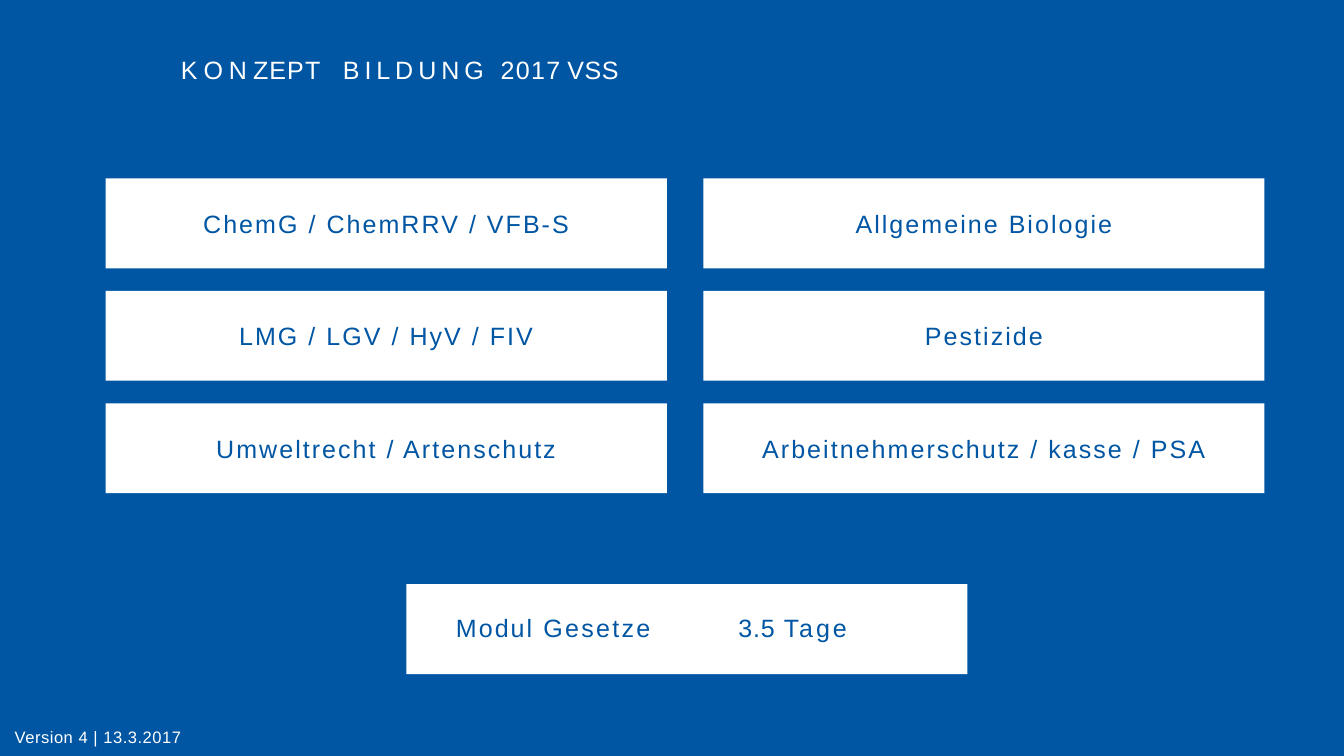
import pptx
import pptx.dml.color
import pptx.enum.shapes
import pptx.enum.text
import pptx.util

BLUE = pptx.dml.color.RGBColor(0x00, 0x56, 0xA3)
WHITE = pptx.dml.color.RGBColor(0xFF, 0xFF, 0xFF)
FONT = "Arial"
TEXT_SIZE = 29.5
VERSION_SIZE = 19.5
SPACING = 2.4  # letter spacing in points

# Grid of topic boxes, in inches
LEFT, TOP = 1.73, 2.92
COLUMN_STEP, ROW_STEP = 9.78, 1.84
BOX_WIDTH, BOX_HEIGHT = 9.18, 1.47
MODULE_LEFT, MODULE_TOP = 6.65, 9.56
MODULE_TEXT_TOP = MODULE_TOP + 0.46

TOPICS = [
    ["ChemG / ChemRRV / VFB-S", "Allgemeine Biologie"],
    ["LMG / LGV / HyV / FIV", "Pestizide"],
    ["Umweltrecht / Artenschutz", "Arbeitnehmerschutz / kasse / PSA"],
]
TITLE = [("KON", 7), ("ZEP", 1.3), ("T ", 9.4), ("BILDUNG ", 5.8),
         ("201", 1.5), ("7 ", 0.1), ("VSS", 0.6)]


def inches(*lengths):
    return [pptx.util.Inches(length) for length in lengths]


def clear_margins(text_frame):
    text_frame.margin_left = text_frame.margin_right = 0
    text_frame.margin_top = text_frame.margin_bottom = 0
    text_frame.word_wrap = True


def format_run(run, color, spacing, size=TEXT_SIZE):
    run.font.name = FONT
    run.font.size = pptx.util.Pt(size)
    run.font.color.rgb = color
    run.font._element.set("spc", str(round(spacing * 100)))


def add_box(slide, left, top, text=""):
    shape = slide.shapes.add_shape(
        pptx.enum.shapes.MSO_SHAPE.RECTANGLE,
        *inches(left, top, BOX_WIDTH, BOX_HEIGHT))
    shape.shadow.inherit = False
    shape.fill.solid()
    shape.fill.fore_color.rgb = WHITE
    shape.line.fill.background()
    if text:
        clear_margins(shape.text_frame)
        shape.text_frame.vertical_anchor = pptx.enum.text.MSO_ANCHOR.MIDDLE
        shape.text_frame.text = text
        paragraph = shape.text_frame.paragraphs[0]
        paragraph.alignment = pptx.enum.text.PP_ALIGN.CENTER
        format_run(paragraph.runs[0], BLUE, SPACING)


def add_label(slide, left, top, width, height, parts, color, size=TEXT_SIZE):
    """Add a line of text whose parts differ in letter spacing."""
    text_box = slide.shapes.add_textbox(*inches(left, top, width, height))
    clear_margins(text_box.text_frame)
    text_box.text_frame.auto_size = pptx.enum.text.MSO_AUTO_SIZE.SHAPE_TO_FIT_TEXT
    paragraph = text_box.text_frame.paragraphs[0]
    for text, spacing in parts:
        run = paragraph.add_run()
        run.text = text
        format_run(run, color, spacing, size)
    return paragraph


def main():
    presentation = pptx.Presentation()
    presentation.slide_width, presentation.slide_height = inches(21.99, 12.37)
    slide = presentation.slides.add_slide(presentation.slide_layouts[6])
    slide.background.fill.solid()
    slide.background.fill.fore_color.rgb = BLUE

    # Title
    add_label(slide, 2.96, 0.89, 7.95, 0.5, TITLE, WHITE)

    # Topics
    for row, topics in enumerate(TOPICS):
        for column, topic in enumerate(topics):
            add_box(slide, LEFT + column * COLUMN_STEP, TOP + row * ROW_STEP, topic)

    # Module and its duration
    add_box(slide, MODULE_LEFT, MODULE_TOP)
    add_label(slide, MODULE_LEFT + 0.81, MODULE_TEXT_TOP, 3.9, 0.5,
              [("Modul ", SPACING), ("Gesetze", 2.7)], BLUE)
    add_label(slide, MODULE_LEFT + 5.43, MODULE_TEXT_TOP, 2.27, 0.5,
              [("3.5 ", 1.1), ("Tage", 3.4)], BLUE)

    # Version
    version = add_label(slide, 0.24, 11.93, 6.17, 0.29,
                        [("Version 4 | 13.3.2017", 0.6)], WHITE, VERSION_SIZE)
    version.line_spacing = pptx.util.Pt(20.9)

    presentation.save("out.pptx")


if __name__ == "__main__":
    main()
